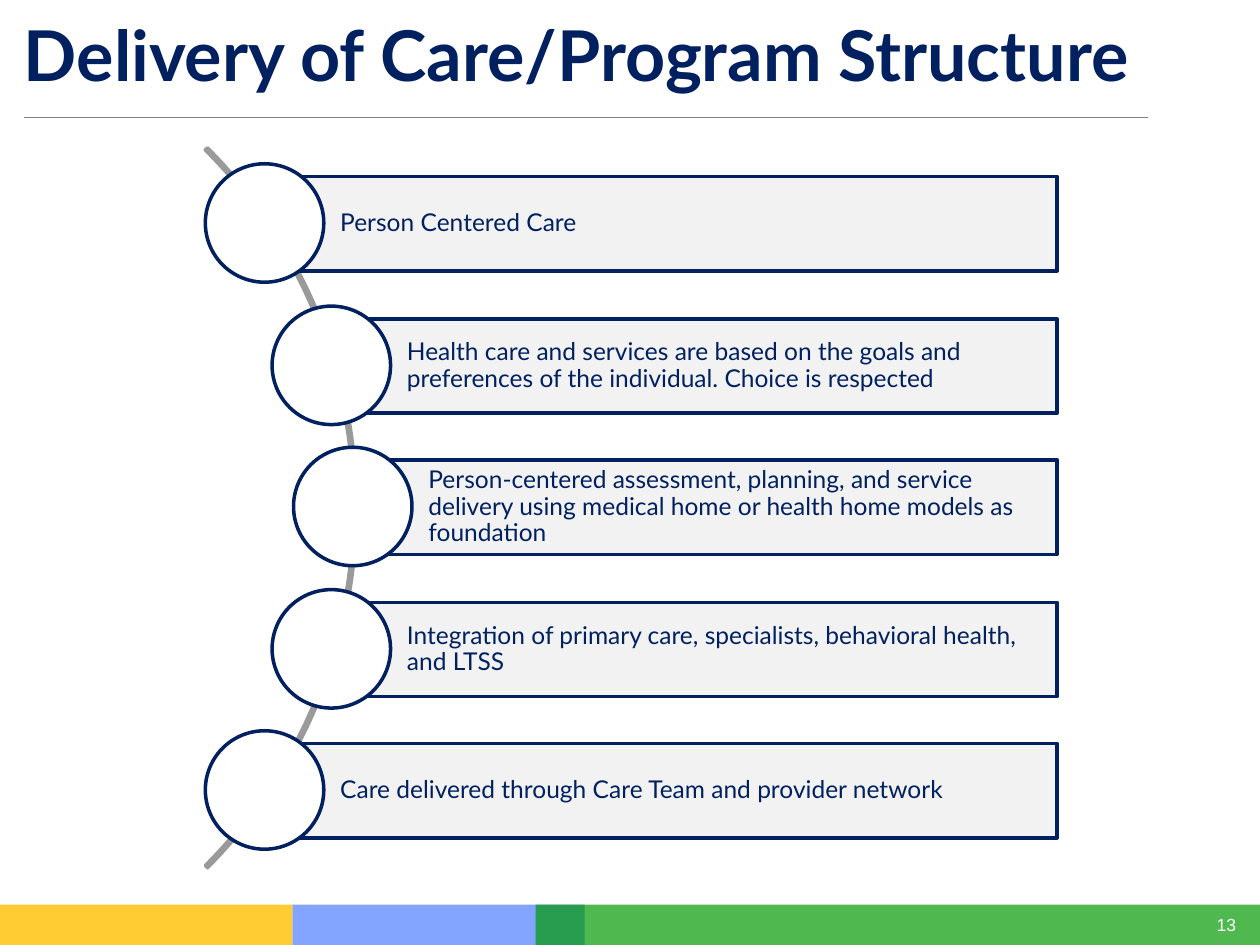
from pptx import Presentation
from pptx.dml.color import RGBColor
from pptx.enum.shapes import MSO_CONNECTOR, MSO_SHAPE
from pptx.enum.text import MSO_ANCHOR, MSO_AUTO_SIZE, PP_ALIGN
from pptx.oxml.ns import qn
from pptx.util import Emu, Pt
from lxml.etree import SubElement

SCALE = 9144  # EMU in one px, 100 px to the inch
NAVY, PALE, WHITE = "002060", "F2F2F2", "FFFFFF"
GREY, RULE = "9A9A9A", "808080"


def px(n):
    return Emu(n * SCALE)


def rgb(code):
    return RGBColor.from_string(code)


def write(frame, text, size=14, font="Lato", color=NAVY, bold=False,
          align=PP_ALIGN.LEFT, anchor=MSO_ANCHOR.MIDDLE,
          inset=(0, 0, 0, 0), space=1.0, wrap=True):
    frame.auto_size = MSO_AUTO_SIZE.NONE
    frame.word_wrap = wrap
    frame.vertical_anchor = anchor
    (frame.margin_left, frame.margin_top,
     frame.margin_right, frame.margin_bottom) = map(px, inset)
    frame.text = text
    para = frame.paragraphs[0]
    para.alignment = align
    para.line_spacing = space
    face = para.runs[0].font
    face.name, face.size, face.bold = font, Pt(size), bold
    face.color.rgb = rgb(color)


class Deck:
    def __init__(self, wide, high):
        self.file = Presentation()
        self.file.slide_width, self.file.slide_height = px(wide), px(high)
        self.slide = self.file.slides.add_slide(self.file.slide_layouts[5])
        self.shapes = self.slide.shapes

    def title(self, text, *box):
        head = self.shapes.title
        head.left, head.top, head.width, head.height = map(px, box)
        write(head.text_frame, text, size=40, bold=True,
              anchor=MSO_ANCHOR.TOP)

    def shape(self, kind, *box, fill=None, line=None, alpha=None):
        item = self.shapes.add_shape(kind, *map(px, box))
        item.shadow.inherit = False
        if fill:
            item.fill.solid()
            item.fill.fore_color.rgb = rgb(fill)
        else:
            item.fill.background()
        if alpha:
            tone = item.fill._xPr.find(".//" + qn("a:srgbClr"))
            SubElement(tone, qn("a:alpha"), val=str(alpha * 1000))
        if line:
            item.line.color.rgb = rgb(line)
            item.line.width = Pt(2)
        else:
            item.line.fill.background()
        return item

    def label(self, text, *box, **style):
        item = self.shapes.add_textbox(*map(px, box))
        write(item.text_frame, text, **style)

    def rule(self, *ends):
        item = self.shapes.add_connector(MSO_CONNECTOR.STRAIGHT,
                                         *map(px, ends))
        item.line.color.rgb = rgb(RULE)
        item.line.width = Pt(0.75)
        SubElement(item._element.spPr, qn("a:effectLst"))

    def arc(self, *box):
        item = self.shape(MSO_SHAPE.BLOCK_ARC, *box, line=GREY)
        for i, value in enumerate((189, 27, 0.003)):  # 315° to 45°, thin
            item.adjustments[i] = value
        SubElement(item.line._get_or_add_ln(), qn("a:round"))

    def step(self, left, top, text):
        bar = self.shape(MSO_SHAPE.RECTANGLE, left, top, RIGHT - left, BAR,
                         fill=PALE, line=NAVY)
        write(bar.text_frame, text, inset=(60, 4, 4, 4), space=0.9)
        self.shape(MSO_SHAPE.OVAL, left - DOT // 2, top + (BAR - DOT) // 2,
                   DOT, DOT, fill=WHITE, line=NAVY)


RIGHT, BAR, DOT = 839, 75, 94
STEPS = [
    (210, "Person Centered Care"),
    (263, "Health care and services are based on the goals and preferences "
          "of the individual. Choice is respected"),
    (280, "Person-centered assessment, planning, and service delivery using "
          "medical home or health home models as foundation\u00a0"),
    (263, "Integration of primary care, specialists, behavioral health, "
          "and LTSS"),
    (210, "Care delivered through Care Team and provider network"),
]
BANDS = [(232, 232, "5E8BFF", 77), (0, 232, "FFC000", 80),
         (425, 575, "009900", 69)]


def main():
    deck = Deck(1000, 750)

    # Footer bands and page number
    for left, wide, color, alpha in BANDS:
        deck.shape(MSO_SHAPE.RECTANGLE, left, 718, wide, 32,
                   fill=color, alpha=alpha)
    deck.label("13", 963, 725, 18, 17, size=10, font="Arial", color=WHITE,
               align=PP_ALIGN.RIGHT, wrap=False)

    # Title and rule
    deck.title("Delivery of Care/Program Structure", 19, 9, 881, 67)
    deck.rule(19, 93, 911, 93)

    # Steps along the arc
    deck.arc(-525, -1, 808, 808)
    for i, (left, text) in enumerate(STEPS):
        deck.step(left, 140 + (225 * i + 1) // 2, text)

    deck.file.save("out.pptx")


if __name__ == "__main__":
    main()
